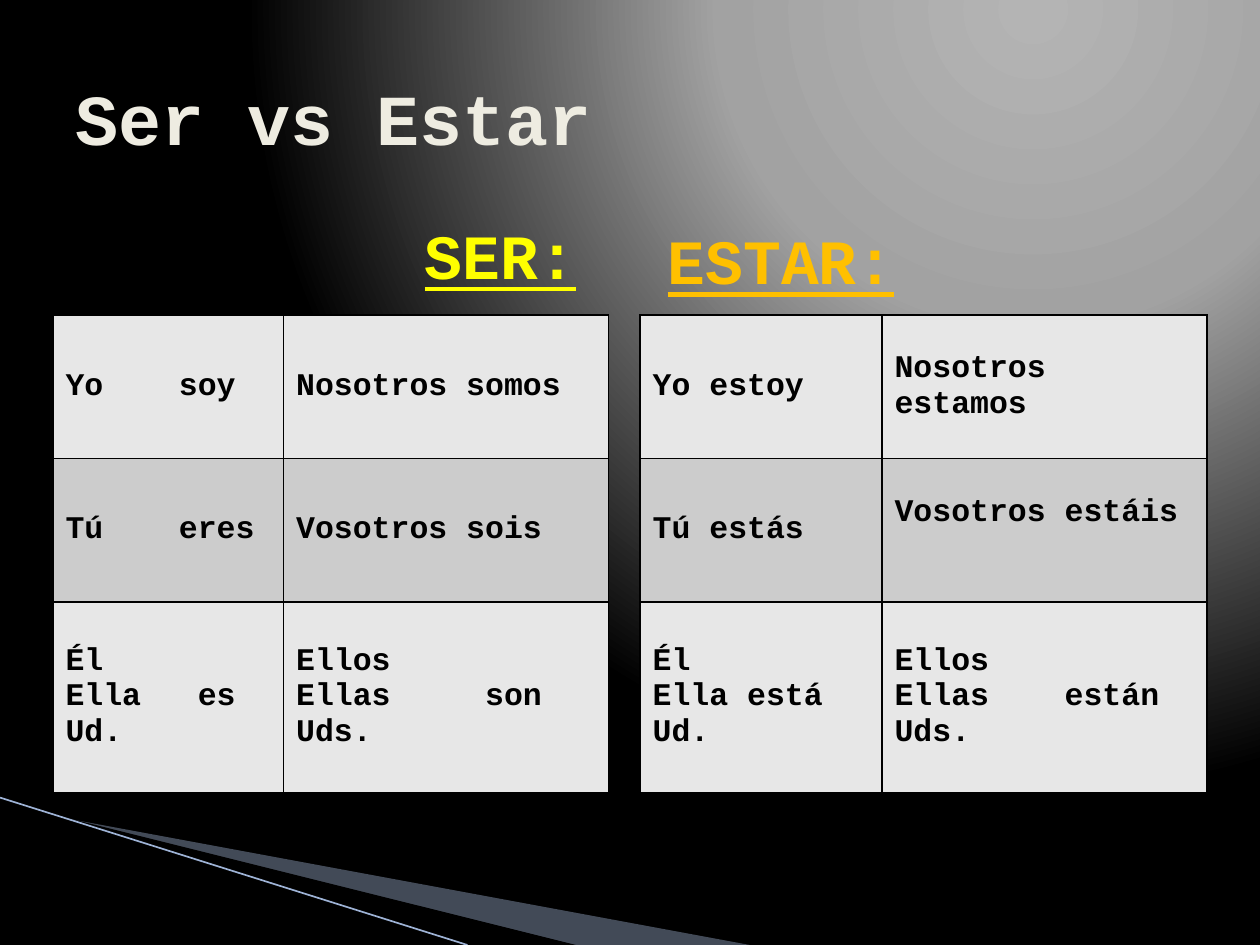
import pptx
import pptx.dml.color
import pptx.enum.shapes
import pptx.enum.text
import pptx.oxml
import pptx.oxml.ns
import pptx.util
from lxml import etree

Inches = pptx.util.Inches
Pt = pptx.util.Pt
RGBColor = pptx.dml.color.RGBColor
Align = pptx.enum.text.PP_ALIGN
Anchor = pptx.enum.text.MSO_ANCHOR
qn = pptx.oxml.ns.qn

FONT = "Courier New"
BLACK = RGBColor(0x00, 0x00, 0x00)
CREAM = RGBColor(0xEE, 0xEC, 0xE1)
YELLOW = RGBColor(0xFF, 0xFF, 0x00)
AMBER = RGBColor(0xFF, 0xC0, 0x00)
SWOOSH = RGBColor(0xA7, 0xB9, 0xDB)
EDGE = RGBColor(0x9E, 0xB3, 0xD6)
BANDS = [RGBColor(0xE7, 0xE7, 0xE7), RGBColor(0xCC, 0xCC, 0xCC)]

# Content: each cell is a list of lines
TITLE = "Ser vs Estar"
HEADINGS = [
    ("SER:", 0.25, 1.58, Align.RIGHT, YELLOW),
    ("ESTAR:", 5.08, 1.62, Align.LEFT, AMBER),
]
SER = [
    [["Yo\tsoy"], ["Nosotros somos"]],
    [["Tú\teres"], ["Vosotros sois"]],
    [["Él", "Ella\tes", "Ud."], ["Ellos", "Ellas\tson", "Uds."]],
]
ESTAR = [
    [["Yo estoy"], ["Nosotros estamos"]],
    [["Tú estás"], ["Vosotros estáis"]],
    [["Él", "Ella está", "Ud."], ["Ellos", "Ellas\testán", "Uds."]],
]
# Rows, left edge, column widths
TABLES = [(SER, 0.42, (1.83, 2.58)), (ESTAR, 5.08, (1.92, 2.58))]
TAB_STOPS = {"soy": 0.9, "eres": 0.9, "es": 1.05, "son": 1.5, "están": 1.35}
TABLE_TOP = 2.5
ROW_HEIGHTS = (1.14, 1.14, 1.51)
GRADIENT = [(0, "B4B4B4"), (40, "A2A2A2"), (100, "000000")]
SWOOSHES = [
    ([(0.55, 6.5), (5.95, 7.5), (4.56, 7.5)], SWOOSH, 40),
    ([(0.53, 6.49), (4.57, 7.5), (3.72, 7.5)], BLACK, 100),
]


def add_run(paragraph, text, size, color, underline=False):
    run = paragraph.add_run()
    run.text = text
    font = run.font
    font.name, font.size, font.bold = FONT, Pt(size), True
    font.color.rgb = color
    if underline:
        font.underline = True


def add_text_box(slide, left, top, width, height):
    frame = slide.shapes.add_textbox(
        Inches(left), Inches(top), Inches(width), Inches(height)).text_frame
    frame.word_wrap = True
    return frame


def set_background(slide):
    fill = slide.background.fill
    fill.gradient()
    gradient = fill._fill._gradFill
    for child in list(gradient):
        gradient.remove(child)
    stops = etree.SubElement(gradient, qn("a:gsLst"))
    for position, color in GRADIENT:
        stop = etree.SubElement(stops, qn("a:gs"), pos=str(position * 1000))
        etree.SubElement(stop, qn("a:srgbClr"), val=color)
    circle = etree.SubElement(gradient, qn("a:path"), path="circle")
    etree.SubElement(circle, qn("a:fillToRect"), l="65000", t="0", r="0", b="98000")


def add_swoosh(slide, points, color, opacity):
    corners = [(Inches(x), Inches(y)) for x, y in points]
    builder = slide.shapes.build_freeform(*corners[0])
    builder.add_line_segments(corners[1:], close=True)
    shape = builder.convert_to_shape()
    shape.shadow.inherit = False
    shape.line.fill.background()
    shape.fill.solid()
    shape.fill.fore_color.rgb = color
    if opacity < 100:
        color_element = shape.fill._xPr.find(".//" + qn("a:srgbClr"))
        etree.SubElement(color_element, qn("a:alpha"), val=str(opacity * 1000))


def set_borders(cell):
    properties = cell._tc.get_or_add_tcPr()
    for index, side in enumerate(("a:lnL", "a:lnR", "a:lnT", "a:lnB")):
        border = etree.Element(qn(side), w=str(Pt(1)))
        fill = etree.SubElement(border, qn("a:solidFill"))
        etree.SubElement(fill, qn("a:srgbClr"), val=str(BLACK))
        properties.insert(index, border)


def fill_cell(cell, lines, color):
    cell.vertical_anchor = Anchor.MIDDLE
    cell.fill.solid()
    cell.fill.fore_color.rgb = color
    set_borders(cell)
    frame = cell.text_frame
    for index, line in enumerate(lines):
        paragraph = frame.add_paragraph() if index else frame.paragraphs[0]
        if "\t" in line:
            stop = TAB_STOPS[line.split("\t")[1]]
            tabs = etree.SubElement(paragraph._p.get_or_add_pPr(), qn("a:tabLst"))
            etree.SubElement(tabs, qn("a:tab"), pos=str(Inches(stop)), algn="l")
        add_run(paragraph, line, 18, BLACK)


def add_verb_table(slide, rows, left, widths):
    table = slide.shapes.add_table(
        len(rows), len(widths), Inches(left), Inches(TABLE_TOP),
        Inches(sum(widths)), Inches(sum(ROW_HEIGHTS))).table
    table.first_row = table.horz_banding = False
    for column, width in zip(table.columns, widths):
        column.width = Inches(width)
    for row_index, row in enumerate(rows):
        table.rows[row_index].height = Inches(ROW_HEIGHTS[row_index])
        for column_index, lines in enumerate(row):
            fill_cell(table.cell(row_index, column_index), lines, BANDS[row_index % 2])
    return table


presentation = pptx.Presentation()
presentation.slide_width, presentation.slide_height = Inches(10), Inches(7.5)
slide = presentation.slides.add_slide(presentation.slide_layouts[6])

# Background and corner decoration
set_background(slide)
for points, color, opacity in SWOOSHES:
    add_swoosh(slide, points, color, opacity)
edge = slide.shapes.add_connector(
    pptx.enum.shapes.MSO_CONNECTOR.STRAIGHT,
    Inches(0), Inches(6.33), Inches(3.71), Inches(7.5))
edge.line.color.rgb = EDGE
edge.line.width = Pt(0.95)
etree.SubElement(edge._element.spPr, qn("a:effectLst"))

# Headings above the tables
for text, left, top, alignment, color in HEADINGS:
    frame = add_text_box(slide, left, top, 4.42, 0.9)
    frame.margin_top = Inches(0.14)
    paragraph = frame.paragraphs[0]
    paragraph.alignment = alignment
    properties = paragraph._p.get_or_add_pPr()
    properties.set("marL", str(Inches(0.4)))
    properties.set("indent", str(Inches(-0.28)))
    add_run(paragraph, text, 36, color, underline=True)

# Title
title = add_text_box(slide, 0.5, 0.3, 9, 1.25)
title.vertical_anchor = Anchor.MIDDLE
add_run(title.paragraphs[0], TITLE, 41, CREAM)

# Conjugation tables
tables = [add_verb_table(slide, *entry) for entry in TABLES]
# The "Vosotros estáis" cell sits half a line higher than its neighbours
tables[1].cell(1, 1).margin_bottom = Inches(0.33)

presentation.save("out.pptx")
